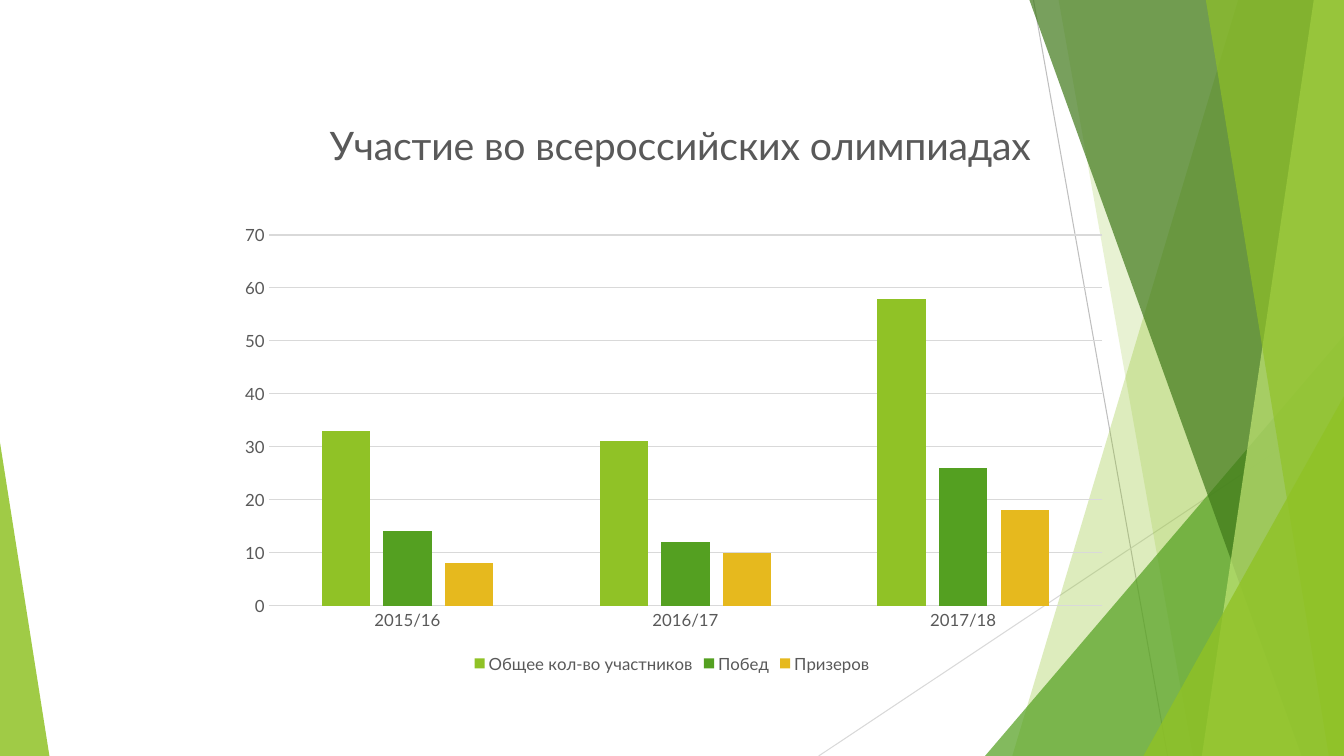
from dataclasses import dataclass

from lxml.etree import SubElement
from pptx import Presentation
from pptx.chart.data import CategoryChartData
from pptx.dml.color import RGBColor
from pptx.enum.chart import XL_CHART_TYPE, XL_LEGEND_POSITION, XL_TICK_MARK
from pptx.enum.shapes import MSO_CONNECTOR, MSO_SHAPE
from pptx.oxml import parse_xml
from pptx.oxml.ns import nsdecls, qn
from pptx.util import Inches, Pt

WIDTH, HEIGHT = 13.33, 7.5
FONT = "Lato"
COLORS = {
    "lime": "90C226", "green": "54A021", "forest": "3F7819", "pale": "C0E474",
    "gold": "E6B91E", "text": "595959", "grid": "D9D9D9", "gray": "BFBFBF",
}


@dataclass
class Ray:
    start: tuple[float, float]
    end: tuple[float, float]
    color: str


@dataclass
class Band:
    """Area from a slanted left edge to the right side of the slide."""
    top: float
    foot: float
    color: str
    alpha: int


@dataclass
class Wedge:
    """Triangle standing on the bottom of the slide."""
    left: float
    top: float
    width: float
    tip: int
    color: str
    alpha: int


@dataclass
class Series:
    name: str
    values: tuple[int, ...]
    color: str


RAYS = [
    Ray((10.25, 0), (11.58, HEIGHT), "gray"),
    Ray((WIDTH, 4.03), (8.12, HEIGHT), "grid"),
]
FACETS = [
    Band(12.28, 10.04, "lime", 30),
    Band(10.5, 11.83, "lime", 20),
    Wedge(9.77, 3.33, 3.56, 1, "green", 72),
    Band(10.21, 12.91, "forest", 70),
    Band(13.03, 11.92, "pale", 70),
    Band(11.96, 13.18, "lime", 65),
    Wedge(11.34, 3.93, 1.99, 1, "lime", 80),
    Wedge(0, 4.39, 0.49, 0, "lime", 85),
]
YEARS = ("2015/16", "2016/17", "2017/18")
SERIES = [
    Series("Общее кол-во участников", (33, 31, 58), "lime"),
    Series("Побед", (14, 12, 26), "green"),
    Series("Призеров", (8, 10, 18), "gold"),
]
TITLE = "Участие во всероссийских олимпиадах"


def rgb(name: str) -> RGBColor:
    return RGBColor.from_string(COLORS[name])


def paint(shape, color: str, alpha: int) -> None:
    shape.shadow.inherit = False
    shape.line.fill.background()
    shape.fill.solid()
    shape.fill.fore_color.rgb = rgb(color)
    tone = shape.fill._xPr.find(qn("a:solidFill"))[0]
    SubElement(tone, qn("a:alpha"), val=str(alpha * 1000))


def draw_ray(slide, ray: Ray) -> None:
    ends = [Inches(n) for n in ray.start + ray.end]
    line = slide.shapes.add_connector(MSO_CONNECTOR.STRAIGHT, *ends)
    line.line.color.rgb = rgb(ray.color)
    line.line.width = Pt(0.75)
    SubElement(line._element.spPr, qn("a:effectLst"))


def draw_band(slide, band: Band) -> None:
    # Points are in hundredths of an inch
    points = [(n * 100, y * 100) for n, y in
              ((band.top, 0), (WIDTH, 0), (WIDTH, HEIGHT), (band.foot, HEIGHT))]
    form = slide.shapes.build_freeform(*points[0], scale=Inches(0.01))
    form.add_line_segments(points[1:], close=True)
    paint(form.convert_to_shape(), band.color, band.alpha)


def draw_wedge(slide, wedge: Wedge) -> None:
    box = (wedge.left, wedge.top, wedge.width, HEIGHT - wedge.top)
    shape = slide.shapes.add_shape(
        MSO_SHAPE.ISOSCELES_TRIANGLE, *[Inches(n) for n in box])
    shape.adjustments[0] = wedge.tip
    paint(shape, wedge.color, wedge.alpha)


def style(font, size: int) -> None:
    font.name = FONT
    font.size = Pt(size)
    font.bold = False
    font.color.rgb = rgb("text")


def layout(**parts: float):
    """Manual layout; sizes and places are fractions of the chart."""
    modes = '<c:xMode val="edge"/><c:yMode val="edge"/>'
    if "w" in parts:
        modes = '<c:layoutTarget val="inner"/>' + modes
    spots = "".join(f'<c:{key} val="{val}"/>' for key, val in parts.items())
    return parse_xml(f'<c:layout {nsdecls("c")}><c:manualLayout>{modes}{spots}'
                     '</c:manualLayout></c:layout>')


def place(owner, spot) -> None:
    for old in owner.findall(qn("c:layout")):
        owner.remove(old)
    text = owner.find(qn("c:tx"))
    if text is None:
        owner.insert(0, spot)
    else:
        text.addnext(spot)


def draw_chart(slide) -> None:
    data = CategoryChartData()
    data.categories = YEARS
    for item in SERIES:
        data.add_series(item.name, item.values)
    box = [Inches(n) for n in (2.22, 0.79, 8.89, 5.93)]
    chart = slide.shapes.add_chart(
        XL_CHART_TYPE.COLUMN_CLUSTERED, *box, data).chart
    style(chart.font, 12)

    # Title
    para = chart.chart_title.text_frame.paragraphs[0]
    run = para.add_run()
    run.text = TITLE
    style(run.font, 28)
    chart.chart_title.include_in_layout = False
    place(chart.chart_title._element, layout(x=0.11, y=0.05))

    # Columns
    plot = chart.plots[0]
    plot.gap_width, plot.overlap = 219, -27
    plot.vary_by_categories = False
    for item, bars in zip(SERIES, plot.series):
        bars.format.fill.solid()
        bars.format.fill.fore_color.rgb = rgb(item.color)
    place(chart._chartSpace.chart.plotArea,
          layout(x=0.05, y=0.26, w=0.93, h=0.62))

    # Axes
    for axis in (chart.category_axis, chart.value_axis):
        axis.major_tick_mark = axis.minor_tick_mark = XL_TICK_MARK.NONE
        style(axis.tick_labels.font, 12)
    values = chart.value_axis
    values.minimum_scale, values.maximum_scale, values.major_unit = 0, 70, 10
    values.format.line.fill.background()
    for part in (chart.category_axis, values.major_gridlines):
        part.format.line.color.rgb = rgb("grid")
        part.format.line.width = Pt(0.75)

    # Legend
    chart.has_legend = True
    chart.legend.position = XL_LEGEND_POSITION.BOTTOM
    chart.legend.include_in_layout = False
    style(chart.legend.font, 12)


def main() -> None:
    deck = Presentation()
    deck.slide_width, deck.slide_height = Inches(WIDTH), Inches(HEIGHT)
    slide = deck.slides.add_slide(deck.slide_layouts[6])
    for ray in RAYS:
        draw_ray(slide, ray)
    for facet in FACETS:
        if isinstance(facet, Band):
            draw_band(slide, facet)
        else:
            draw_wedge(slide, facet)
    draw_chart(slide)
    deck.save("out.pptx")


if __name__ == "__main__":
    main()
